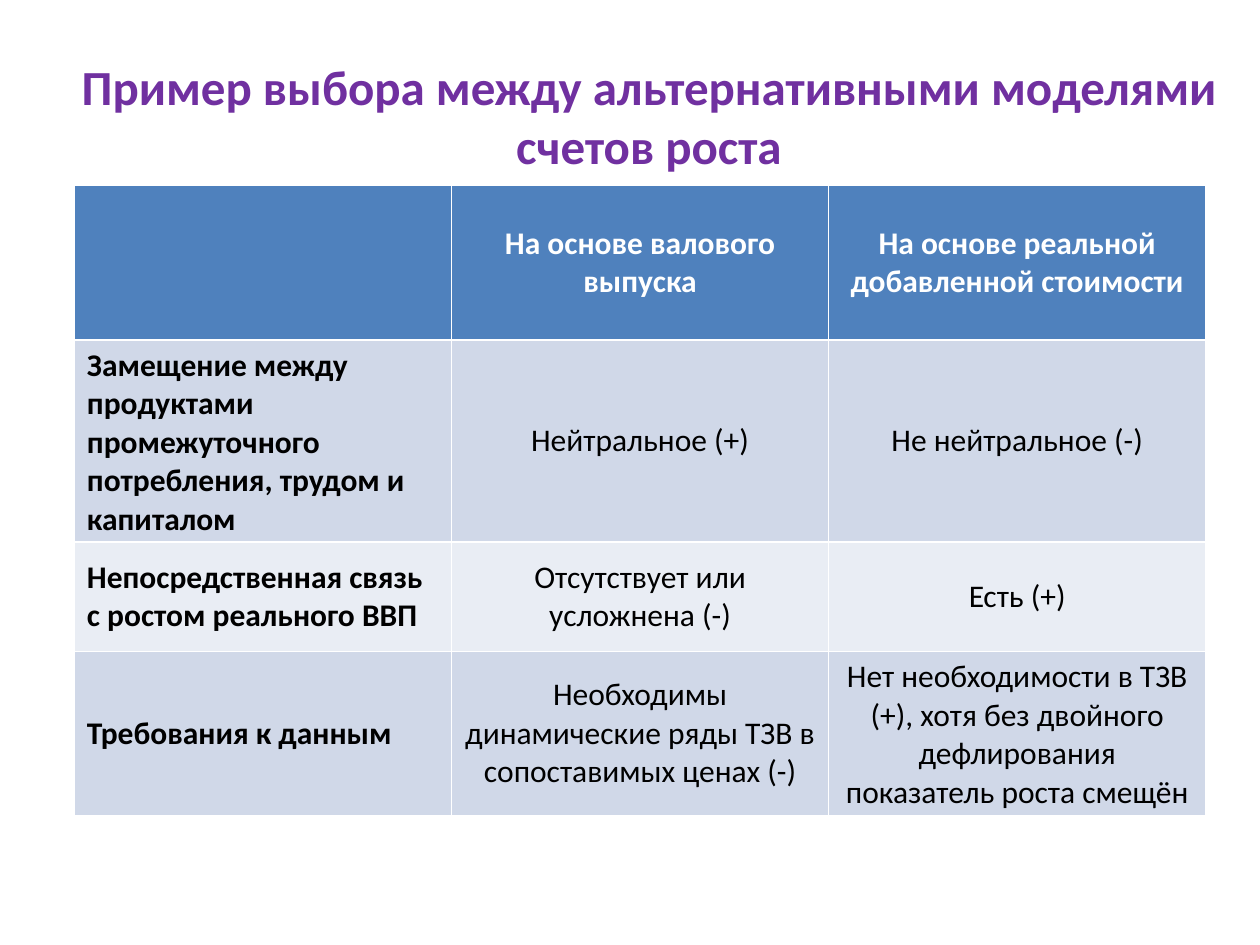
from pptx import Presentation
from pptx.dml.color import RGBColor
from pptx.enum.text import MSO_ANCHOR, PP_ALIGN
from pptx.util import Inches, Pt

PURPLE = RGBColor(0x70, 0x30, 0xA0)
BLUE = RGBColor(0x4F, 0x81, 0xBD)
BAND = RGBColor(0xD0, 0xD8, 0xE8)
PALE = RGBColor(0xE9, 0xED, 0xF4)
WHITE = RGBColor(0xFF, 0xFF, 0xFF)
BLACK = RGBColor(0x00, 0x00, 0x00)

TITLE = "Пример выбора между альтернативными моделями счетов роста"
ROWS = [
    (1.23, BLUE, ["", "На основе валового выпуска",
                  "На основе реальной добавленной стоимости"]),
    (1.17, BAND, ["Замещение между продуктами промежуточного потребления, "
                  "трудом и капиталом",
                  "Нейтральное (+)", "Не нейтральное (-)"]),
    (0.87, PALE, ["Непосредственная связь с ростом реального ВВП",
                  "Отсутствует или усложнена (-)", "Есть (+)"]),
    (1.17, BAND, ["Требования к данным",
                  "Необходимы динамические ряды ТЗВ в сопоставимых ценах (-)",
                  "Нет необходимости в ТЗВ (+), хотя без двойного "
                  "дефлирования показатель роста смещён"]),
]


def write(frame, text, size, color, bold, align):
    par = frame.paragraphs[0]
    par.alignment = align
    run = par.add_run()
    run.text = text
    look = {"name": "Calibri", "size": Pt(size), "bold": bold}
    for key, value in look.items():
        setattr(run.font, key, value)
    run.font.color.rgb = color


def add_title(slide):
    box = slide.shapes.add_textbox(Inches(0.3), Inches(0.4),
                                   Inches(9.7), Inches(1.04))
    box.text_frame.word_wrap = True
    write(box.text_frame, TITLE, 28, PURPLE, True, PP_ALIGN.CENTER)


def fill_cell(cell, text, fill, head, first):
    cell.fill.solid()
    cell.fill.fore_color.rgb = fill
    cell.vertical_anchor = MSO_ANCHOR.MIDDLE
    if text:
        write(cell.text_frame, text, 18, WHITE if head else BLACK,
              head or first, PP_ALIGN.LEFT if first else PP_ALIGN.CENTER)


def add_grid(slide):
    total = sum(height for height, _, _ in ROWS)
    table = slide.shapes.add_table(len(ROWS), 3, Inches(0.59), Inches(1.47),
                                   Inches(8.98), Inches(total)).table
    for i, (height, fill, texts) in enumerate(ROWS):
        table.rows[i].height = Inches(height)
        for j, text in enumerate(texts):
            fill_cell(table.cell(i, j), text, fill, i == 0, j == 0)


def main():
    deck = Presentation()
    deck.slide_width, deck.slide_height = Inches(10), Inches(7.5)
    slide = deck.slides.add_slide(deck.slide_layouts[6])
    add_title(slide)
    add_grid(slide)
    deck.save("out.pptx")


if __name__ == "__main__":
    main()
